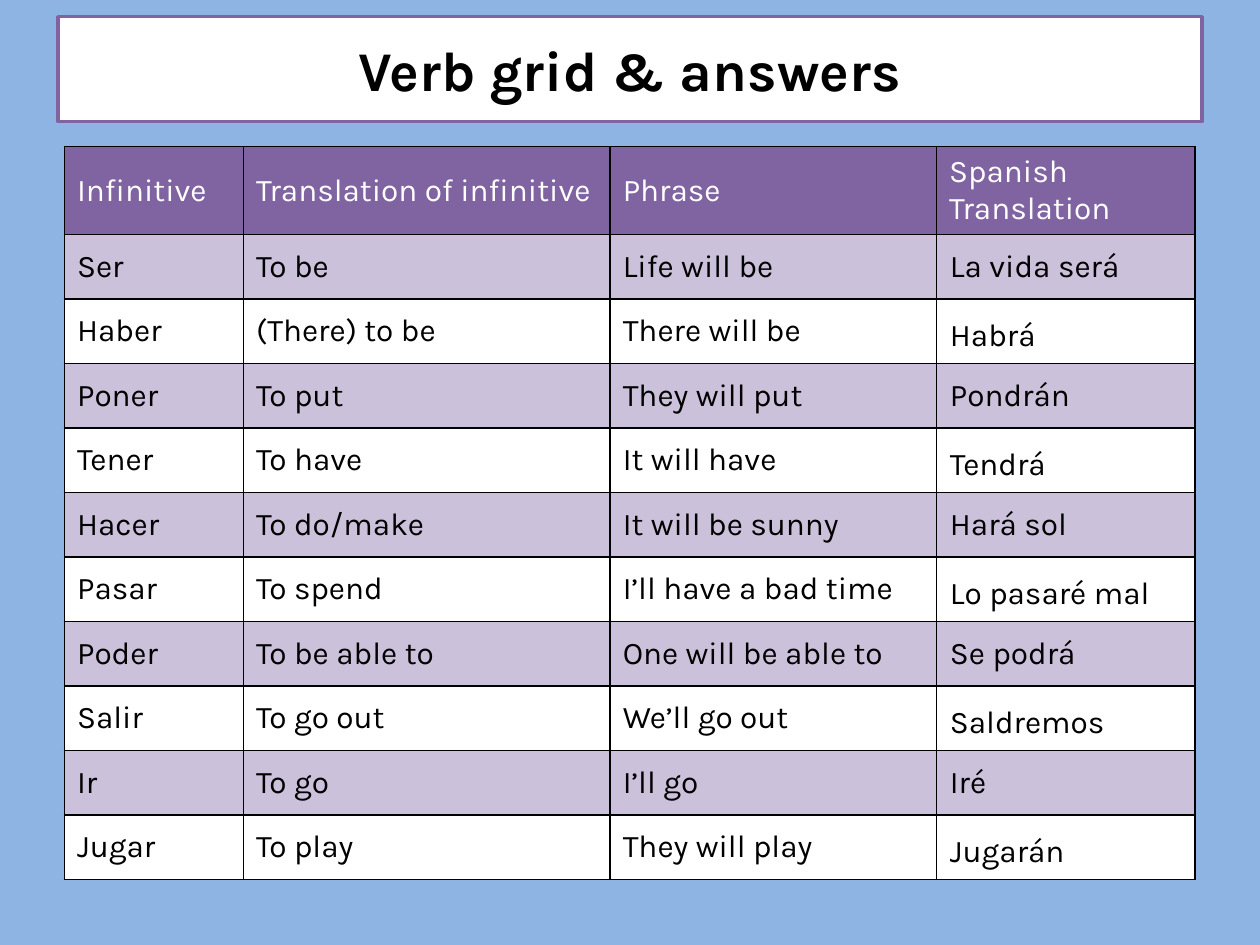
from lxml import etree
from pptx import Presentation
from pptx.dml.color import RGBColor
from pptx.enum.text import MSO_ANCHOR, MSO_AUTO_SIZE, PP_ALIGN
from pptx.oxml.ns import qn
from pptx.util import Cm, Pt

CENTER = PP_ALIGN.CENTER
LEFT = PP_ALIGN.LEFT
MIDDLE = MSO_ANCHOR.MIDDLE
GROW = MSO_AUTO_SIZE.SHAPE_TO_FIT_TEXT
TITLE_ONLY = 5

SKY = "8EB4E3"
PURPLE = "8064A2"
LILAC = "CCC1DA"
WHITE = "FFFFFF"
BLACK = "000000"

HEADINGS = ("Infinitive", "Translation of infinitive", "Phrase", "Spanish Translation")
VERBS = [
    ("Ser", "To be", "Life will be", "La vida será"),
    ("Haber", "(There) to be", "There will be", "Habrá"),
    ("Poner", "To put", "They will put", "Pondrán"),
    ("Tener", "To have", "It will have", "Tendrá"),
    ("Hacer", "To do/make", "It will be sunny", "Hará sol"),
    ("Pasar", "To spend", "I’ll have a bad time", "Lo pasaré mal"),
    ("Poder", "To be able to", "One will be able to", "Se podrá"),
    ("Salir", "To go out", "We’ll go out", "Saldremos"),
    ("Ir", "To go", "I’ll go", "Iré"),
    ("Jugar", "To play", "They will play", "Jugarán"),
]
COLUMN_WIDTHS = (3.61, 7.39, 6.58, 5.21)
HEADING_HEIGHT = 1.78
ROW_HEIGHT = 1.3
ANSWER_TOPS = (4.84, 6.22)


def color(value):
    return RGBColor.from_string(value)


class VerbSlide:
    font = "Karla"
    body_size = 18
    title_size = 32

    def __init__(self, deck):
        self.slide = deck.slides.add_slide(deck.slide_layouts[TITLE_ONLY])
        background = self.slide.background.fill
        background.solid()
        background.fore_color.rgb = color(SKY)

    def set_text(self, frame, text, size, ink=BLACK, bold=False, align=LEFT):
        frame.text = text
        paragraph = frame.paragraphs[0]
        paragraph.alignment = align
        paragraph.font.size = Pt(size)
        for run in paragraph.runs:
            run.font.name = self.font
            run.font.size = Pt(size)
            run.font.bold = bold
            run.font.color.rgb = color(ink)

    def title(self, text, left, top, width, height):
        heading = self.slide.shapes.title
        heading.left, heading.top = Cm(left), Cm(top)
        heading.width, heading.height = Cm(width), Cm(height)
        heading.fill.solid()
        heading.fill.fore_color.rgb = color(WHITE)
        heading.line.color.rgb = color(PURPLE)
        heading.line.width = Pt(2)
        self.set_text(heading.text_frame, text, self.title_size, bold=True, align=CENTER)
        heading.text_frame.vertical_anchor = MIDDLE
        heading.text_frame.auto_size = GROW

    def border(self, cell):
        properties = cell._tc.get_or_add_tcPr()
        for side in ("a:lnL", "a:lnR", "a:lnT", "a:lnB"):
            edge = etree.SubElement(properties, qn(side), w=str(Pt(1)))
            fill = etree.SubElement(edge, qn("a:solidFill"))
            etree.SubElement(fill, qn("a:srgbClr"), val=BLACK)

    def cell(self, cell, text, background, ink):
        self.set_text(cell.text_frame, text, self.body_size, ink)
        cell.vertical_anchor = MIDDLE
        self.border(cell)
        cell.fill.solid()
        cell.fill.fore_color.rgb = color(background)

    def table(self, rows, left, top):
        heights = [HEADING_HEIGHT] + [ROW_HEIGHT] * (len(rows) - 1)
        grid = self.slide.shapes.add_table(
            len(rows), len(COLUMN_WIDTHS), Cm(left), Cm(top),
            Cm(sum(COLUMN_WIDTHS)), Cm(sum(heights))).table
        for column, width in zip(grid.columns, COLUMN_WIDTHS):
            column.width = Cm(width)
        for index, (row, height, texts) in enumerate(zip(grid.rows, heights, rows)):
            row.height = Cm(height)
            background = LILAC if index % 2 else WHITE
            ink = BLACK
            if index == 0:
                background, ink = PURPLE, WHITE
            for cell, text in zip(row.cells, texts):
                self.cell(cell, text, background, ink)

    def answer(self, text, left, top):
        box = self.slide.shapes.add_textbox(Cm(left), Cm(top), Cm(4.8), Cm(1.02))
        box.text_frame.word_wrap = True
        box.text_frame.auto_size = GROW
        self.set_text(box.text_frame, text, self.body_size)


def main():
    deck = Presentation()
    deck.slide_width, deck.slide_height = Cm(25.4), Cm(19.05)
    page = VerbSlide(deck)
    page.title("Verb grid & answers", 1.17, 0.58, 23.06, 1.63)
    page.table([HEADINGS] + [(*verb[:3], "") for verb in VERBS], 1.3, 2.95)
    for index, verb in enumerate(VERBS):
        pair, place = divmod(index, 2)
        page.answer(verb[3], 18.9, ANSWER_TOPS[place] + pair * 2 * ROW_HEIGHT)
    deck.save("out.pptx")


if __name__ == "__main__":
    main()
